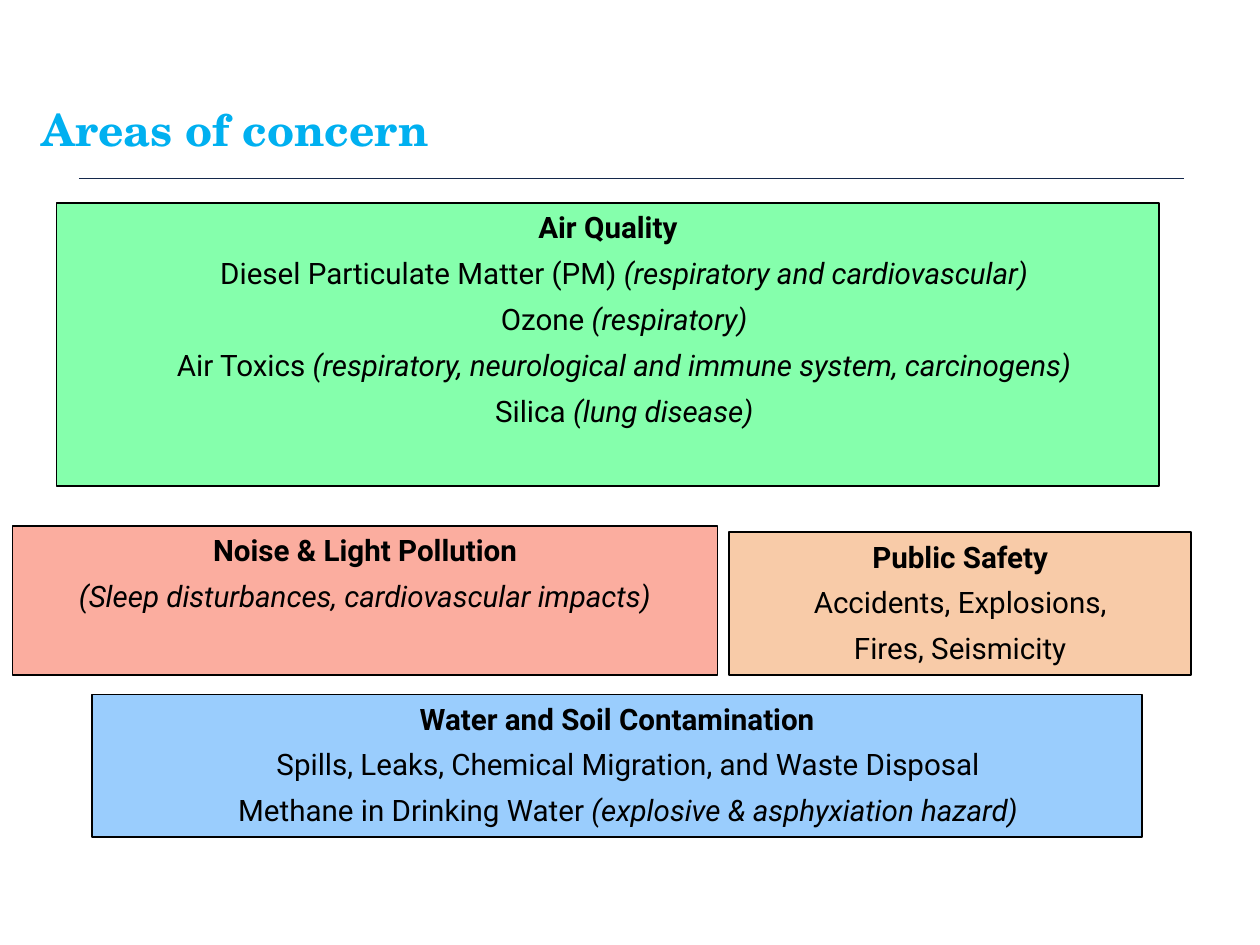
from dataclasses import dataclass

from lxml import etree
from pptx import Presentation
from pptx.dml.color import RGBColor
from pptx.enum.shapes import MSO_CONNECTOR, MSO_SHAPE
from pptx.enum.text import MSO_ANCHOR, PP_ALIGN
from pptx.oxml.ns import qn
from pptx.util import Inches, Pt

RECTANGLE = MSO_SHAPE.RECTANGLE
STRAIGHT = MSO_CONNECTOR.STRAIGHT
CENTER, LEFT = PP_ALIGN.CENTER, PP_ALIGN.LEFT
TOP, MIDDLE = MSO_ANCHOR.TOP, MSO_ANCHOR.MIDDLE


@dataclass(frozen=True)
class Theme:
    title_font: str = "TeX Gyre Schola"
    body_font: str = "Roboto"
    title_size: float = 36
    body_size: float = 24
    line_gap: float = 8.5
    rule_width: float = 1
    border_width: float = 1.25
    title: str = "00B0F0"
    rule: str = "14284B"
    ink: str = "000000"
    air: str = "69FF99"
    noise: str = "FB9B89"
    safety: str = "F8C39A"
    water: str = "83C2FD"


def add_span(para, text, *, font, size, color, bold=False, italic=False):
    span = para.add_run()
    span.text = text
    span.font.name = font
    span.font.size = Pt(size)
    span.font.color.rgb = RGBColor.from_string(color)
    span.font.bold = bold
    span.font.italic = italic


class ConcernPage:
    """Draw the elements of one page, with lengths in percent of its size."""

    def __init__(self, deck, theme):
        self.deck = deck
        self.theme = theme
        self.page = deck.slides.add_slide(deck.slide_layouts[6])

    def across(self, percent):
        return round(self.deck.slide_width * percent / 100)

    def down(self, percent):
        return round(self.deck.slide_height * percent / 100)

    def place(self, left, top, width, height):
        return (self.across(left), self.down(top),
                self.across(width), self.down(height))

    def set_frame(self, box, anchor, side, top, bottom):
        frame = box.text_frame
        frame.word_wrap = True
        frame.vertical_anchor = anchor
        frame.margin_left = frame.margin_right = Inches(side)
        frame.margin_top, frame.margin_bottom = Inches(top), Inches(bottom)
        return frame

    def rule(self, left, right, height):
        line = self.page.shapes.add_connector(
            STRAIGHT, self.across(left), self.down(height),
            self.across(right), self.down(height))
        line.line.color.rgb = RGBColor.from_string(self.theme.rule)
        line.line.width = Pt(self.theme.rule_width)
        etree.SubElement(line.element.spPr, qn("a:effectLst"))

    def title(self, text, area):
        box = self.page.shapes.add_textbox(*self.place(*area))
        para = self.set_frame(box, MIDDLE, 0, 0, 0).paragraphs[0]
        para.alignment = LEFT
        add_span(para, text, font=self.theme.title_font, bold=True,
                 size=self.theme.title_size, color=self.theme.title)

    def panel(self, heading, lines, area, color, *, opacity=81, indent=0, bottom=0.07):
        theme = self.theme
        box = self.page.shapes.add_shape(RECTANGLE, *self.place(*area))
        box.shadow.inherit = False
        box.fill.solid()
        box.fill.fore_color.rgb = RGBColor.from_string(color)
        tint = box.element.spPr.find(qn("a:solidFill")).find(qn("a:srgbClr"))
        etree.SubElement(tint, qn("a:alpha")).set("val", str(opacity * 1000))
        box.line.color.rgb = RGBColor.from_string(theme.ink)
        box.line.width = Pt(theme.border_width)

        frame = self.set_frame(box, TOP, 0.14, 0.07, bottom)
        style = dict(font=theme.body_font, size=theme.body_size, color=theme.ink)
        para = frame.paragraphs[0]
        para.alignment = CENTER
        add_span(para, heading, bold=True, **style)
        for plain, effect in lines:
            para = frame.add_paragraph()
            para.alignment = CENTER
            para.space_before = Pt(theme.line_gap)
            if indent:
                properties = para._p.get_or_add_pPr()
                properties.set("marL", "0")
                properties.set("indent", str(Inches(indent)))
            if plain:
                add_span(para, plain, **style)
            if effect:
                add_span(para, effect, italic=True, **style)


def main():
    deck = Presentation()
    deck.slide_width, deck.slide_height = Inches(14.22), Inches(10.67)
    theme = Theme()
    page = ConcernPage(deck, theme)
    page.rule(6.26, 93.95, 18.93)
    page.title("Areas of concern", (3.31, 5.81, 94.16, 15.56))
    page.panel("Air Quality", [
        ("Diesel Particulate Matter (PM) ", "(respiratory and cardiovascular)"),
        ("Ozone ", "(respiratory)"),
        ("Air Toxics ", "(respiratory, neurological and immune system, carcinogens)"),
        ("Silica ", "(lung disease)"),
    ], (4.5, 21.46, 87.48, 29.99), theme.air, indent=0.37, bottom=0)
    page.panel("Noise & Light Pollution", [
        ("", "(Sleep disturbances, cardiovascular impacts)"),
    ], (0.98, 55.67, 55.98, 15.75), theme.noise)
    page.panel("Public Safety", [
        ("Accidents, Explosions,", ""),
        ("Fires, Seismicity", ""),
    ], (57.88, 56.33, 36.64, 15.09), theme.safety, opacity=86)
    page.panel("Water and Soil Contamination", [
        ("Spills, Leaks, Chemical Migration, and Waste Disposal", ""),
        ("Methane in Drinking Water ", "(explosive & asphyxiation hazard)"),
    ], (7.31, 73.48, 83.33, 15.09), theme.water, indent=0.25)
    deck.save("out.pptx")


if __name__ == "__main__":
    main()
